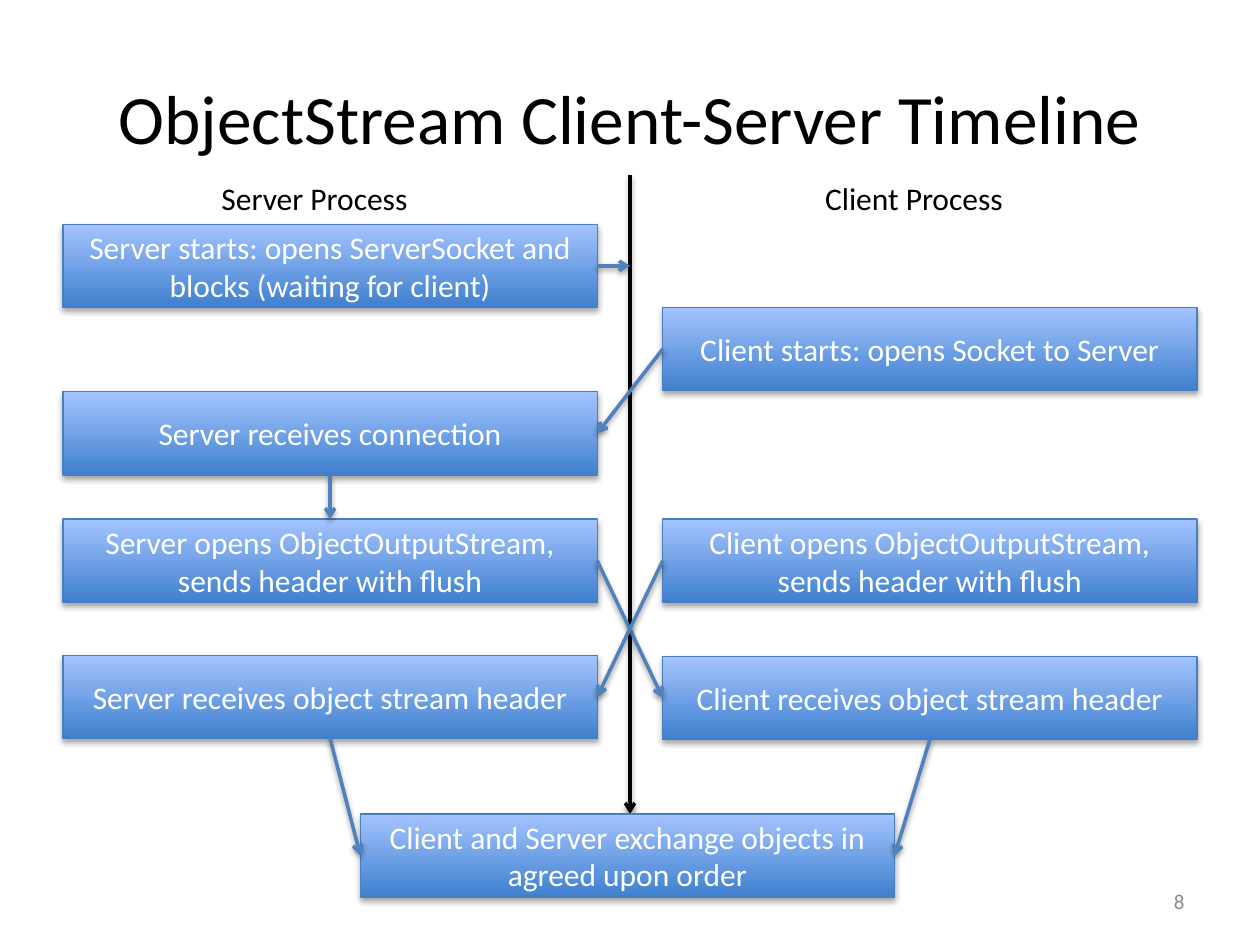
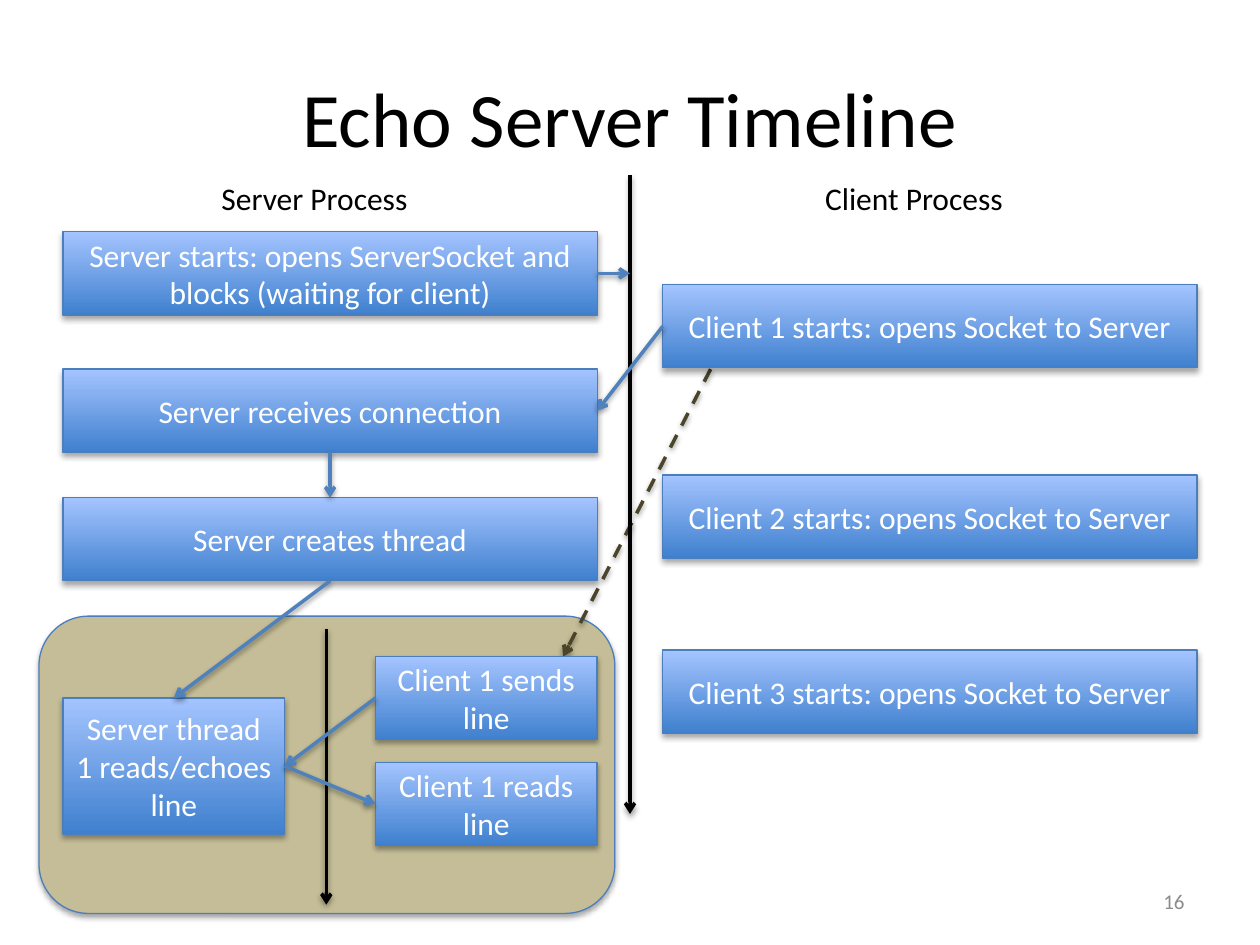
from lxml.etree import SubElement
from pptx import Presentation
from pptx.dml.color import RGBColor
from pptx.enum.dml import MSO_LINE_DASH_STYLE as DASH
from pptx.enum.shapes import MSO_CONNECTOR, MSO_SHAPE
from pptx.enum.text import MSO_ANCHOR as ANCHOR, MSO_AUTO_SIZE as AUTO_SIZE, PP_ALIGN as ALIGN
from pptx.oxml.ns import qn
from pptx.util import Inches, Pt

COLORS = {
    "text": "000000", "box text": "FFFFFF", "page number": "8C8C8C",
    "box bottom": "3F80CE", "box top": "A4C4FF", "outline": "4B7EBC",
    "panel": "C4BD97", "arrow": "4F81BD", "timeline": "000000",
    "dashed": "4A452A", "shadow": "000000",
}
FONT = "Calibri"

# Shared layout, in inches
SERVER_LEFT, CLIENT_LEFT = 0.5, 5.26
BOX_WIDTH, BOX_HEIGHT = 4.24, 0.66
SMALL_LEFT, SMALL_WIDTH = 2.98, 1.76
TIMELINE_X = 5

# Connection sites of a rectangle
TOP, LEFT, BOTTOM, RIGHT = range(4)


def color(name):
    return RGBColor.from_string(COLORS[name])


def add_shadow(shape, distance, opacity):
    """Soft black shadow straight below the shape."""
    effects = SubElement(shape._element.spPr, qn("a:effectLst"))
    shadow = SubElement(effects, qn("a:outerShdw"), blurRad="40000",
                        dist=str(distance), dir="5400000", rotWithShape="0")
    tone = SubElement(shadow, qn("a:srgbClr"), val=COLORS["shadow"])
    SubElement(tone, qn("a:alpha"), val=str(opacity * 1000))


def write_text(shape, text, size=18, fill="text", align=ALIGN.LEFT,
               anchor=ANCHOR.TOP, wrap=True):
    frame = shape.text_frame
    frame.word_wrap = wrap
    frame.vertical_anchor = anchor
    if not wrap:
        frame.auto_size = AUTO_SIZE.SHAPE_TO_FIT_TEXT
    paragraph = frame.paragraphs[0]
    paragraph.alignment = align
    run = paragraph.add_run()
    run.text = text
    run.font.name, run.font.size = FONT, Pt(size)
    run.font.color.rgb = color(fill)


def add_label(slide, text, left, top, width, height, **text_format):
    label = slide.shapes.add_textbox(*map(Inches, (left, top, width, height)))
    write_text(label, text, **text_format)


def add_outlined(slide, kind, left, top, width, height):
    shape = slide.shapes.add_shape(kind, *map(Inches, (left, top, width, height)))
    shape.line.color.rgb = color("outline")
    shape.line.width = Pt(0.75)
    return shape


def add_box(slide, text, left, top, width=BOX_WIDTH, height=BOX_HEIGHT):
    box = add_outlined(slide, MSO_SHAPE.RECTANGLE, left, top, width, height)
    box.fill.gradient()
    box.fill.gradient_angle = 90
    for stop, name in zip(box.fill.gradient_stops, ("box bottom", "box top")):
        stop.color.rgb = color(name)
    add_shadow(box, 23000, 35)
    write_text(box, text, fill="box text", align=ALIGN.CENTER, anchor=ANCHOR.MIDDLE)
    return box


def add_panel(slide, left, top, width, height):
    panel = add_outlined(slide, MSO_SHAPE.ROUNDED_RECTANGLE, left, top, width, height)
    panel.fill.solid()
    panel.fill.fore_color.rgb = color("panel")
    add_shadow(panel, 23000, 35)


def site_point(box, site):
    """Position of a connection site on a box."""
    across = {LEFT: 0, RIGHT: 2}.get(site, 1)
    down = {TOP: 0, BOTTOM: 2}.get(site, 1)
    return box.left + box.width * across // 2, box.top + box.height * down // 2


def add_arrow(slide, start, end, tone="arrow", dash=None):
    """Each end is a (box, site) pair or an (x, y) point in inches."""
    attached = [not isinstance(pair[0], (int, float)) for pair in (start, end)]
    points = [site_point(*pair) if fixed else tuple(map(Inches, pair))
              for pair, fixed in zip((start, end), attached)]
    arrow = slide.shapes.add_connector(MSO_CONNECTOR.STRAIGHT, *points[0], *points[1])
    if attached[0]:
        arrow.begin_connect(*start)
    if attached[1]:
        arrow.end_connect(*end)
    arrow.line.color.rgb = color(tone)
    arrow.line.width = Pt(2)
    if dash:
        arrow.line.dash_style = dash
    SubElement(arrow.line._get_or_add_ln(), qn("a:tailEnd"), type="arrow")
    add_shadow(arrow, 20000, 38)


def add_frame(slide, title, number, title_size):
    """Title, page number, column headings and the central timeline."""
    add_label(slide, title, 0.5, 0.3, 9, 1.25, size=title_size,
              align=ALIGN.CENTER, anchor=ANCHOR.MIDDLE)
    add_label(slide, number, 7.17, 6.95, 2.33, 0.4, size=12, fill="page number",
              align=ALIGN.RIGHT, anchor=ANCHOR.MIDDLE)
    add_label(slide, "Server Process", 1.66, 1.37, 1.7, 0.4, wrap=False)
    add_label(slide, "Client Process", 6.45, 1.37, 1.63, 0.4, wrap=False)
    add_arrow(slide, (TIMELINE_X, 1.39), (TIMELINE_X, 6.46), tone="timeline")


def add_connection(slide, client_text, start_top, client_top, receive_top):
    """Server start, client start and accepted connection; returns the last box."""
    start = add_box(slide, "Server starts: opens ServerSocket and blocks (waiting for client)",
                    SERVER_LEFT, start_top)
    client = add_box(slide, client_text, CLIENT_LEFT, client_top)
    receive = add_box(slide, "Server receives connection", SERVER_LEFT, receive_top)
    add_arrow(slide, (start, RIGHT), (TIMELINE_X, start_top + BOX_HEIGHT / 2))
    add_arrow(slide, (client, LEFT), (receive, RIGHT))
    return receive


def build_object_stream(slide):
    add_frame(slide, "ObjectStream Client-Server Timeline", "8", 39.6)
    receive = add_connection(slide, "Client starts: opens Socket to Server", 1.78, 2.44, 3.11)

    # Header exchange
    opens, headers = [], []
    for side, left, header_top in (("Server", SERVER_LEFT, 5.2), ("Client", CLIENT_LEFT, 5.21)):
        opens.append(add_box(slide, f"{side} opens ObjectOutputStream, sends header with flush",
                             left, 4.12))
        headers.append(add_box(slide, f"{side} receives object stream header", left, header_top))
    exchange = add_box(slide, "Client and Server exchange objects in agreed upon order", 2.86, 6.46)

    add_arrow(slide, (receive, BOTTOM), (opens[0], TOP))
    add_arrow(slide, (opens[0], RIGHT), (headers[1], LEFT))
    add_arrow(slide, (opens[1], LEFT), (headers[0], RIGHT))
    for header, site in zip(headers, (LEFT, RIGHT)):
        add_arrow(slide, (header, BOTTOM), (exchange, site))


def build_echo_server(slide):
    # Thread panel lies behind everything else
    add_panel(slide, 0.31, 4.89, 4.57, 2.36)
    add_arrow(slide, (2.59, 4.99), (2.59, 7.18), tone="timeline")
    add_arrow(slide, (5.64, 2.93), (4.47, 5.21), tone="dashed", dash=DASH.DASH)

    add_frame(slide, "Echo Server Timeline", "16", 44)
    receive = add_connection(slide, "Client 1 starts: opens Socket to Server", 1.84, 2.26, 2.93)
    create = add_box(slide, "Server creates thread", SERVER_LEFT, 3.95)
    for number, top in ((2, 3.77), (3, 5.16)):
        add_box(slide, f"Client {number} starts: opens Socket to Server", CLIENT_LEFT, top)

    # Echo loop inside the thread
    sends = add_box(slide, "Client 1 sends line", SMALL_LEFT, 5.21, SMALL_WIDTH)
    thread = add_box(slide, "Server thread 1 reads/echoes line", SERVER_LEFT, 5.54,
                     SMALL_WIDTH, 1.08)
    reads = add_box(slide, "Client 1 reads line", SMALL_LEFT, 6.05, SMALL_WIDTH)

    add_arrow(slide, (receive, BOTTOM), (create, TOP))
    add_arrow(slide, (sends, LEFT), (thread, RIGHT))
    add_arrow(slide, (thread, RIGHT), (reads, LEFT))
    add_arrow(slide, (create, BOTTOM), (thread, TOP))


def main():
    presentation = Presentation()
    presentation.slide_width, presentation.slide_height = Inches(10), Inches(7.5)
    for build in (build_object_stream, build_echo_server):
        build(presentation.slides.add_slide(presentation.slide_layouts[6]))
    presentation.save("out.pptx")


if __name__ == "__main__":
    main()
